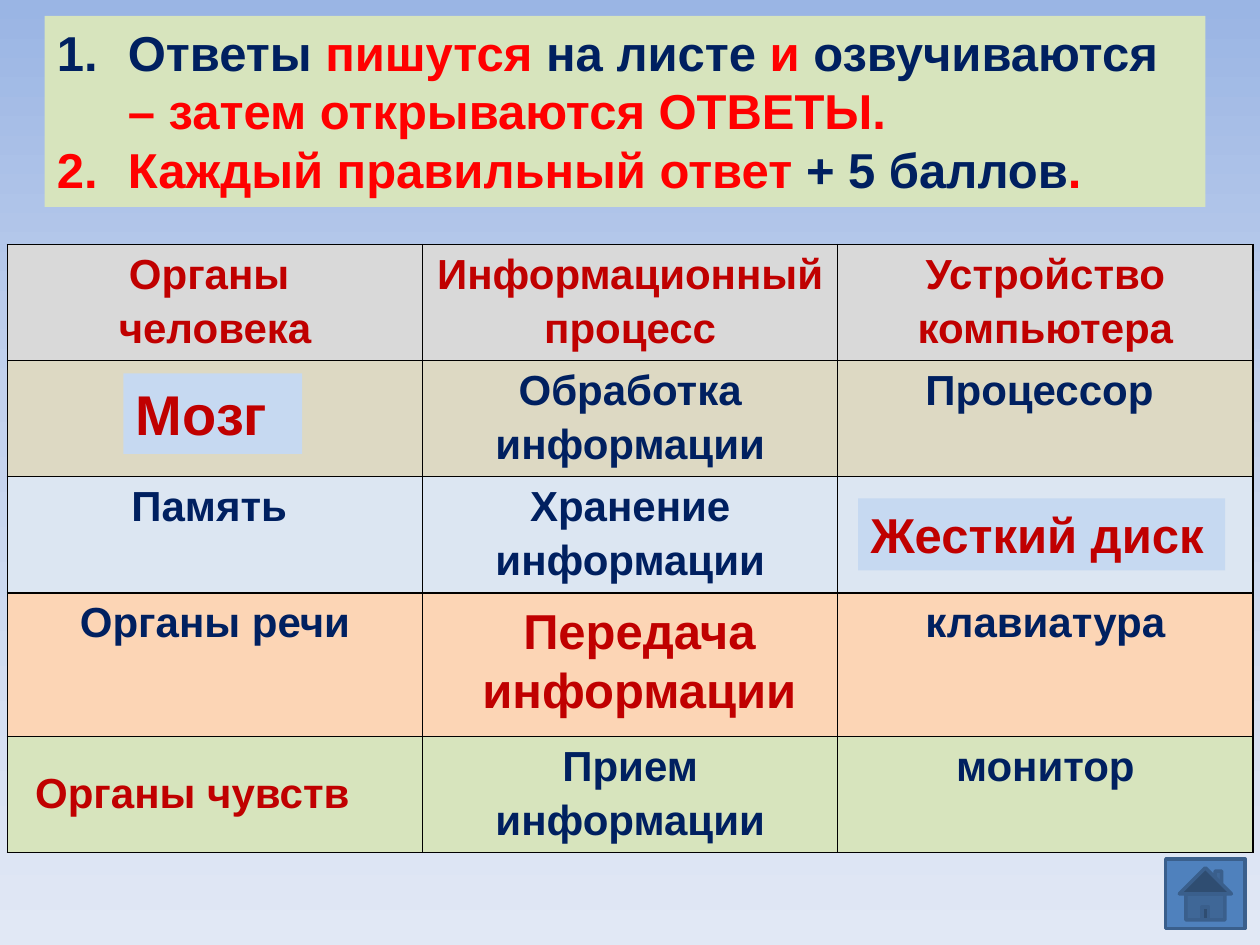
from copy import deepcopy
from dataclasses import dataclass

from lxml import etree
from pptx import Presentation
from pptx.dml.color import RGBColor
from pptx.enum.shapes import MSO_SHAPE
from pptx.enum.text import MSO_ANCHOR, MSO_AUTO_SIZE, PP_ALIGN
from pptx.oxml.ns import qn
from pptx.util import Cm, Pt

LEFT, CENTER = PP_ALIGN.LEFT, PP_ALIGN.CENTER
TOP = MSO_ANCHOR.TOP
FIT_TEXT = MSO_AUTO_SIZE.SHAPE_TO_FIT_TEXT
RECTANGLE = MSO_SHAPE.RECTANGLE
HOME_BUTTON = MSO_SHAPE.ACTION_BUTTON_HOME


@dataclass(frozen=True)
class Theme:
    font: str = "Arial"
    navy: str = "002060"
    red: str = "FF0000"
    dark_red: str = "C00000"
    black: str = "000000"
    answer_fill: str = "C6D9F1"
    rules_fill: str = "D7E4BD"
    button_fill: str = "4F81BD"
    button_line: str = "3A5F8C"
    row_fills: tuple = ("D9D9D9", "DDD9C3", "DCE6F2", "FCD5B5", "D7E4BD")
    background: tuple = ((0, "9AB5E4"), (0.41, "C2D1ED"), (1, "E1E8F5"))
    body_size: int = 24
    large_size: int = 28
    huge_size: int = 32


def rgb(color):
    return RGBColor.from_string(color)


def write(paragraph, text, *, font, size, color, align=LEFT, spacing=None):
    """Add one bold run to the paragraph."""
    paragraph.alignment = align
    if spacing:
        paragraph.line_spacing = spacing
    run = paragraph.add_run()
    run.text = text
    run.font.name = font
    run.font.size = Pt(size)
    run.font.bold = True
    run.font.color.rgb = rgb(color)


def paragraphs_for(text_frame, count):
    for _ in range(count - 1):
        text_frame.add_paragraph()
    return text_frame.paragraphs


def number_paragraph(paragraph, indent):
    properties = paragraph._p.get_or_add_pPr()
    properties.set("marL", str(indent))
    properties.set("indent", str(-indent))
    etree.SubElement(properties, qn("a:buFont"), typeface="+mj-lt")
    etree.SubElement(properties, qn("a:buAutoNum"), type="arabicPeriod")


def outline_cell(cell, color, width):
    properties = cell._tc.get_or_add_tcPr()
    for side in ("a:lnL", "a:lnR", "a:lnT", "a:lnB"):
        line = etree.SubElement(properties, qn(side), w=str(width))
        fill = etree.SubElement(line, qn("a:solidFill"))
        etree.SubElement(fill, qn("a:srgbClr"), val=color)


class SlideBuilder:
    def __init__(self, slide, theme):
        self.slide = slide
        self.theme = theme

    def background(self):
        fill = self.slide.background.fill
        fill.gradient()
        fill.gradient_angle = 270
        stop_list = self.slide._element.find(".//" + qn("a:gsLst"))
        stop_list.insert(1, deepcopy(stop_list[0]))
        for stop, (position, color) in zip(fill.gradient_stops, self.theme.background):
            stop.position = position
            stop.color.rgb = rgb(color)

    def shape(self, kind, box, fill, line=None):
        shape = self.slide.shapes.add_shape(kind, *map(Cm, box))
        shape.shadow.inherit = False
        shape.fill.solid()
        shape.fill.fore_color.rgb = rgb(fill)
        if line:
            shape.line.color.rgb = rgb(line)
            shape.line.width = Pt(2)
        else:
            shape.line.fill.background()
        return shape

    def prepare_text(self, shape):
        frame = shape.text_frame
        frame.word_wrap = True
        frame.auto_size = FIT_TEXT
        frame.vertical_anchor = TOP
        return frame

    def answer(self, text, box, size, fill=None, align=LEFT):
        if fill:
            shape = self.shape(RECTANGLE, box, fill)
        else:
            shape = self.slide.shapes.add_textbox(*map(Cm, box))
        frame = self.prepare_text(shape)
        write(frame.paragraphs[0], text, font=self.theme.font, size=size,
              color=self.theme.dark_red, align=align)

    def rules(self, items, box):
        """Draw a numbered list whose items are lists of (text, color)."""
        frame = self.prepare_text(self.shape(RECTANGLE, box, self.theme.rules_fill))
        for paragraph, runs in zip(paragraphs_for(frame, len(items)), items):
            for text, color in runs:
                write(paragraph, text, font=self.theme.font,
                      size=self.theme.large_size, color=color)
            number_paragraph(paragraph, Cm(1.43))

    def table(self, rows, left, top, column_width, row_heights):
        columns = len(rows[0])
        table = self.slide.shapes.add_table(
            len(rows), columns, Cm(left), Cm(top),
            Cm(column_width * columns), Cm(sum(row_heights))).table
        table.first_row = table.horz_banding = False
        for column in table.columns:
            column.width = Cm(column_width)
        for index, texts in enumerate(rows):
            table.rows[index].height = Cm(row_heights[index])
            color = self.theme.navy if index else self.theme.dark_red
            for cell, text in zip(table.rows[index].cells, texts):
                self.cell(cell, text, color, self.theme.row_fills[index])

    def cell(self, cell, text, color, fill):
        outline_cell(cell, self.theme.black, Pt(1))
        cell.fill.solid()
        cell.fill.fore_color.rgb = rgb(fill)
        cell.margin_left = cell.margin_right = Cm(0.18)
        cell.margin_top = cell.margin_bottom = 0
        if not text:
            return
        lines = text.split("\n")
        for paragraph, line in zip(paragraphs_for(cell.text_frame, len(lines)), lines):
            write(paragraph, line, font=self.theme.font, size=self.theme.body_size,
                  color=color, align=CENTER, spacing=1.15)


def main():
    presentation = Presentation()
    presentation.slide_width, presentation.slide_height = Cm(25.4), Cm(19.05)
    theme = Theme()
    slide = presentation.slides.add_slide(presentation.slide_layouts[6])
    builder = SlideBuilder(slide, theme)
    builder.background()

    builder.table([
        ("Органы \nчеловека", "Информационный процесс", "Устройство компьютера"),
        ("", "Обработка информации", "Процессор "),
        ("Память ", "Хранение информации", ""),
        ("Органы речи", "", "клавиатура"),
        ("", "Прием информации", "монитор"),
    ], left=0.15, top=4.93, column_width=8.37, row_heights=(2.34, 2.34, 2.34, 2.9, 2.34))

    builder.answer("Мозг", (2.49, 7.53, 3.6, 1.62), theme.huge_size, theme.answer_fill)
    builder.answer("Жесткий диск", (17.3, 10.05, 7.4, 1.45), theme.large_size,
                   theme.answer_fill)
    builder.answer("Передача информации", (8.89, 11.99, 8, 2.65), theme.large_size,
                   align=CENTER)
    builder.answer("Органы чувств", (0.46, 15.32, 7.6, 1.28), theme.body_size)

    builder.shape(HOME_BUTTON, (23.5, 17.32, 1.6, 1.4), theme.button_fill,
                  theme.button_line)
    builder.rules([
        [("Ответы", theme.navy), (" пишутся ", theme.red), ("на листе ", theme.navy),
         ("и ", theme.red), ("озвучиваются ", theme.navy),
         ("– затем открываются ОТВЕТЫ.", theme.red)],
        [("Каждый правильный ответ ", theme.red), ("+ 5 баллов", theme.navy),
         (".", theme.red)],
    ], (0.9, 0.32, 23.4, 3.85))

    presentation.save("out.pptx")


if __name__ == "__main__":
    main()
